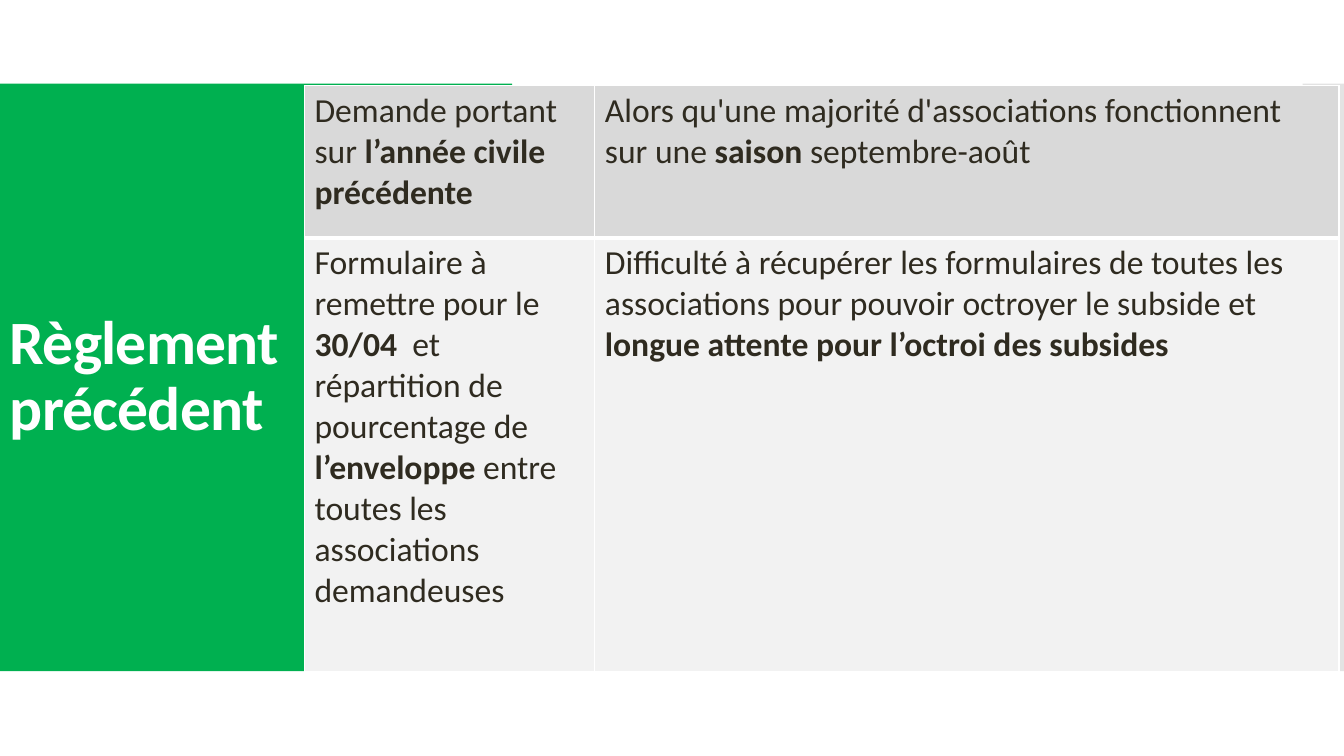
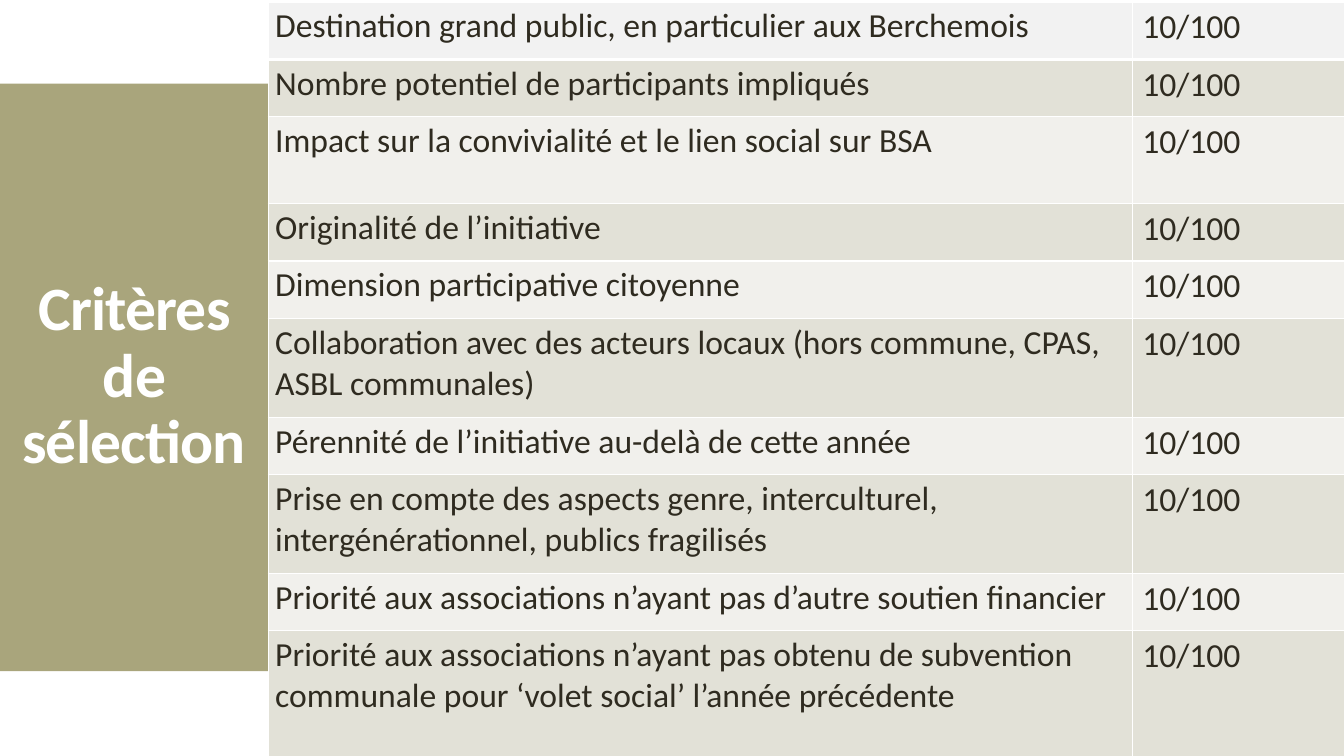
from lxml.etree import SubElement
from pptx import Presentation
from pptx.dml.color import RGBColor
from pptx.enum.shapes import MSO_SHAPE
from pptx.enum.text import MSO_ANCHOR, PP_ALIGN
from pptx.oxml.ns import qn
from pptx.util import Inches, Pt

COLORS = {
    "white": "FFFFFF",
    "ink": "2F2B20",
    "green": "00B050",
    "khaki": "A9A57C",
    "strip": "C8C8C8",
    "head": "D9D9D9",
    "pale": "F2F2F2",
    "band_dark": "E2E1D7",
    "band_light": "F1F0EC",
}
FONT = "Calibri"
BAND_TOP, BAND_HEIGHT = 0.83, 5.83

RULES = [
    ("Demande portant sur **l’année civile précédente**",
     "Alors qu'une majorité d'associations fonctionnent sur une **saison** septembre-août"),
    ("Formulaire à remettre pour le **30/04  **et répartition de pourcentage de "
     "**l’enveloppe **entre toutes les associations demandeuses",
     "Difficulté à récupérer les formulaires de toutes les associations pour pouvoir "
     "octroyer le subside et **longue attente pour l’octroi des subsides**"),
]
SCORE = "10/100"
CRITERIA = [
    ("Destination grand public, en particulier aux Berchemois", 0.57),
    ("Nombre potentiel de participants impliqués", 0.57),
    ("Impact sur la convivialité et le lien social sur BSA", 0.86),
    ("Originalité de l’initiative", 0.57),
    ("Dimension participative citoyenne", 0.57),
    ("Collaboration avec des acteurs locaux (hors commune, CPAS, ASBL communales)", 0.98),
    ("Pérennité de l’initiative au-delà de cette année", 0.57),
    ("Prise en compte des aspects genre, interculturel, intergénérationnel, "
     "publics fragilisés", 0.98),
    ("Priorité aux associations n’ayant pas d’autre soutien financier", 0.57),
    ("Priorité aux associations n’ayant pas obtenu de subvention communale pour "
     "‘volet social’ l’année précédente", 1.26),
]


def rgb(name):
    return RGBColor.from_string(COLORS[name])


def write(tf, text, size=24, color="ink", bold=False, align=PP_ALIGN.LEFT,
          line_spacing=None, tracking=None):
    p = tf.paragraphs[0]
    p.alignment = align
    if line_spacing:
        p.line_spacing = line_spacing
    for i, part in enumerate(text.split("**")):
        if not part:
            continue
        r = p.add_run()
        r.text = part
        r.font.name = FONT
        r.font.size = Pt(size)
        r.font.bold = bold or i % 2 == 1
        r.font.color.rgb = rgb(color)
        if tracking:
            r.font._element.set("spc", str(int(tracking * 100)))


def add_band(slide, left, width, color, opacity=None):
    sp = slide.shapes.add_shape(MSO_SHAPE.RECTANGLE, Inches(left), Inches(BAND_TOP),
                                Inches(width), Inches(BAND_HEIGHT))
    sp.shadow.inherit = False
    sp.fill.solid()
    sp.fill.fore_color.rgb = rgb(color)
    sp.line.fill.background()
    if opacity:
        clr = sp._element.spPr.find(qn("a:solidFill"))[0]
        SubElement(clr, qn("a:alpha"), val=str(opacity * 1000))


def add_title(slide, text, width, align=PP_ALIGN.LEFT):
    box = slide.shapes.add_textbox(Inches(0), Inches(BAND_TOP), Inches(width),
                                   Inches(BAND_HEIGHT))
    tf = box.text_frame
    tf.word_wrap = True
    tf.vertical_anchor = MSO_ANCHOR.MIDDLE
    write(tf, text, size=44, color="white", bold=True, align=align,
          line_spacing=0.9, tracking=-0.6)


def add_borders(cell, top, bottom):
    tcPr = cell._tc.get_or_add_tcPr()
    for side, width in (("L", 1), ("R", 1), ("T", top), ("B", bottom)):
        ln = SubElement(tcPr, qn(f"a:ln{side}"), w=str(Pt(width)))
        fill = SubElement(ln, qn("a:solidFill"))
        SubElement(fill, qn("a:srgbClr"), val=COLORS["white"])


def add_grid(slide, left, top, widths, heights, rows, fills, first_inset=0.1):
    frame = slide.shapes.add_table(len(rows), len(widths), Inches(left), Inches(top),
                                   Inches(sum(widths)), Inches(sum(heights)))
    table = frame.table
    table.first_row = table.horz_banding = False
    for column, width in zip(table.columns, widths):
        column.width = Inches(width)
    for i, (texts, height, fill) in enumerate(zip(rows, heights, fills)):
        table.rows[i].height = Inches(height)
        for j, text in enumerate(texts):
            cell = table.cell(i, j)
            add_borders(cell, top=3 if i == 1 else 1, bottom=3 if i == 0 else 1)
            cell.fill.solid()
            cell.fill.fore_color.rgb = rgb(fill)
            if j == 0:
                cell.margin_left = cell.margin_right = Inches(first_inset)
                if first_inset < 0.1:
                    cell.margin_top = cell.margin_bottom = Inches(0.04)
            write(cell.text_frame, text)


def add_rules_slide(prs):
    s = prs.slides.add_slide(prs.slide_layouts[6])
    add_band(s, 0, 5.08, "green")
    add_title(s, "Règlement précédent", 4.01)
    add_band(s, 12.92, 0.42, "strip", opacity=50)
    add_grid(s, 3.02, 0.85, [2.88, 7.38], [1.51, 4.3], RULES, ["head", "pale"])


def add_criteria_slide(prs):
    s = prs.slides.add_slide(prs.slide_layouts[6])
    add_band(s, 0, 3.77, "khaki")
    add_title(s, "Critères de sélection", 2.66, align=PP_ALIGN.CENTER)
    rows = [(text, SCORE) for text, _ in CRITERIA]
    heights = [height for _, height in CRITERIA]
    fills = ["pale"] + [("band_light", "band_dark")[i % 2] for i in range(1, len(rows))]
    add_grid(s, 2.66, 0.02, [8.57, 2.11], heights, rows, fills, first_inset=0.07)


def main():
    prs = Presentation()
    prs.slide_width = Inches(13.33)
    prs.slide_height = Inches(7.5)
    add_rules_slide(prs)
    add_criteria_slide(prs)
    prs.save("out.pptx")


if __name__ == "__main__":
    main()
